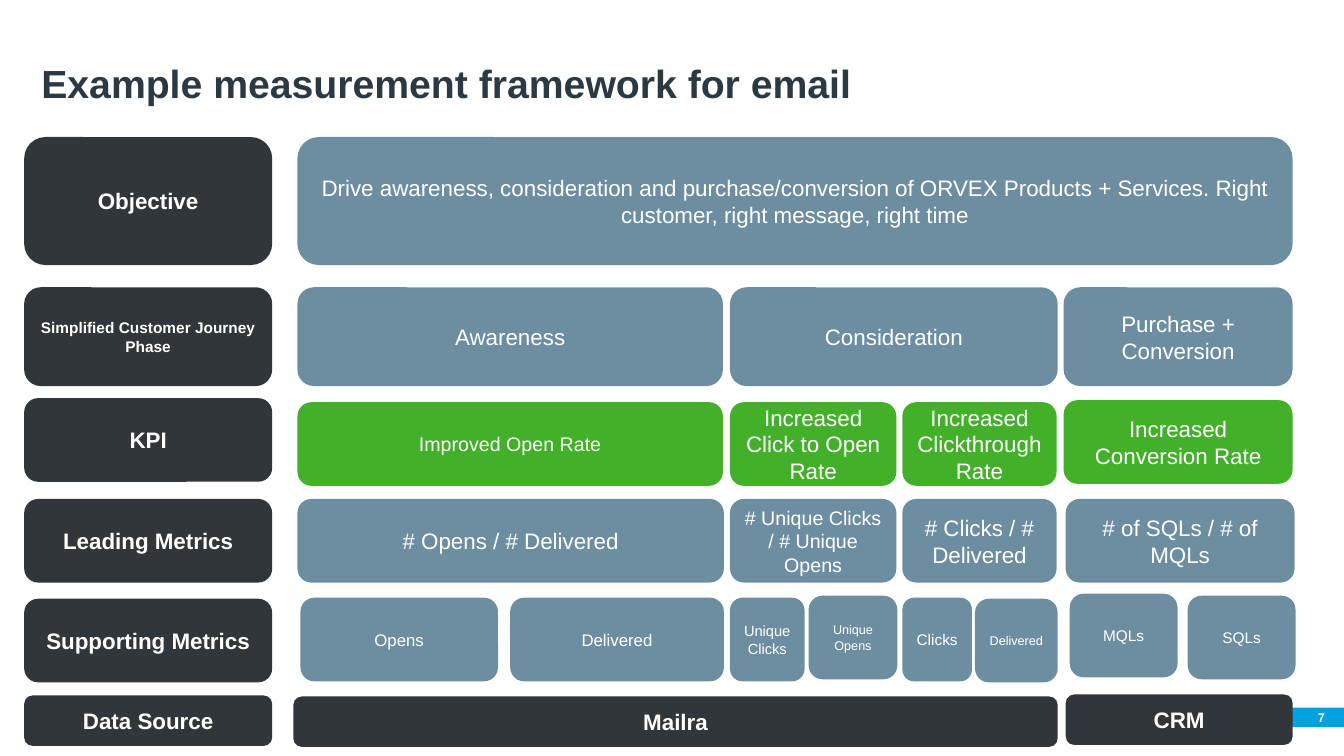
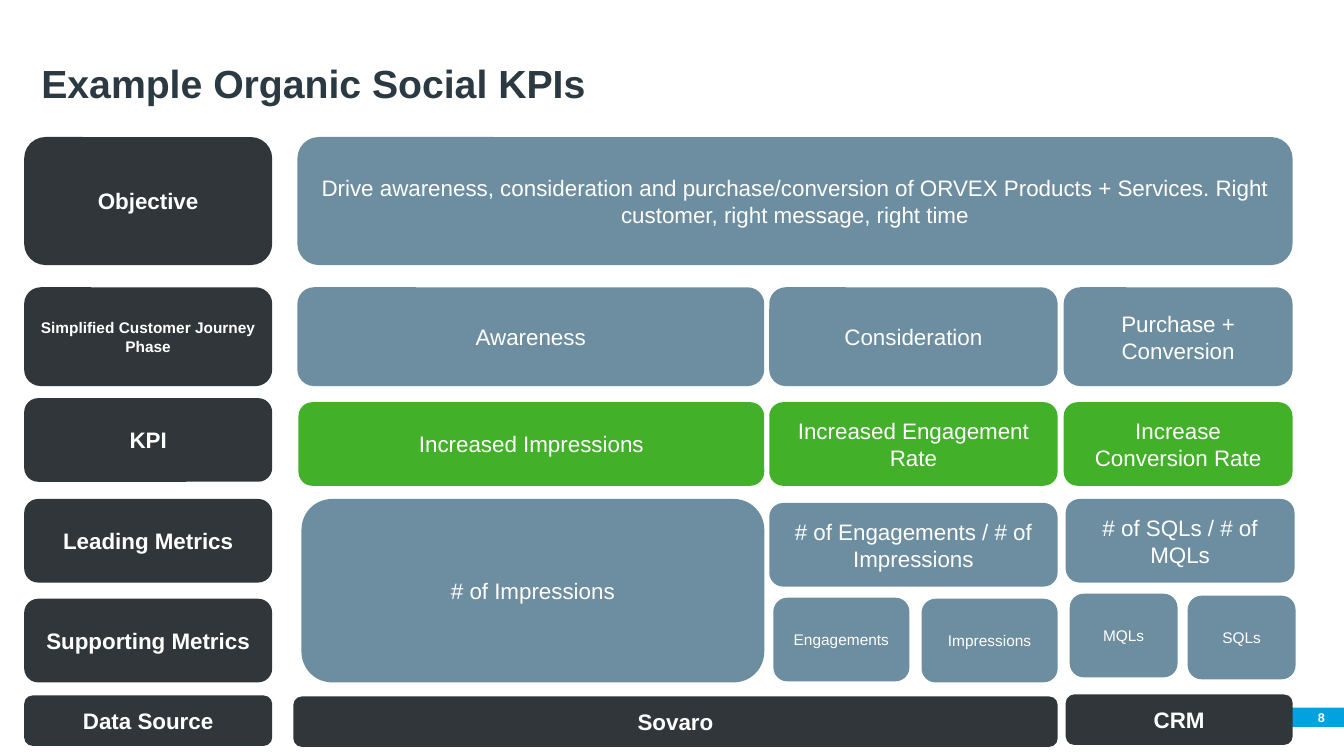
from pptx import Presentation
from pptx.dml.color import RGBColor
from pptx.enum import shapes, text
from pptx.util import Inches, Pt

THEME = {
    "font": "Arial",
    "colours": {"ink": "2B3A42", "white": "FFFFFF", "dark": "303639",
                "slate": "6D8EA0", "green": "43B02A", "accent": "00A3E0"},
    "sizes": {"title": 28, "body": 16, "medium": 14, "small": 12,
              "label": 11, "compact": 10.5, "tiny": 9},
}
FIRST_PAGE = 7
TITLE_AREA = (0.31, 0.27, 12.51, 0.84)
PAGE_BAR = (12.7, 7.02, 0.63, 0.19)
LABEL_LEFT, LABEL_WIDTH = 0.24, 2.46

ROWS = {
    "objective": (1.36, 1.27, "slate"),
    "phase": (2.85, 0.98, "slate"),
    "kpi": (3.99, 0.83, "green"),
    "leading": (4.95, 0.83, "slate"),
    "supporting": (5.93, 0.83, "slate"),
    "both metrics": (4.95, 1.82, "slate"),
    "source": (6.9, 0.5, "dark"),
}

LABELS = [
    ("objective", "Objective", "body", 0),
    ("phase", "Simplified Customer Journey Phase", "label", 0),
    ("kpi", "KPI", "body", -0.04),
    ("leading", "Leading Metrics", "body", 0),
    ("supporting", "Supporting Metrics", "body", 0.01),
    ("source", "Data Source", "body", 0),
]

# row, left, width, wording, size, vertical nudge
SHARED_CELLS = [
    ("objective", 2.95, 9.87,
     "Drive awareness, consideration and purchase/conversion of ORVEX "
     "Products + Services. Right customer, right message, right time", "body", 0),
    ("phase", 10.55, 2.27, "Purchase + Conversion", "body", 0),
    ("leading", 10.57, 2.27, "# of SQLs / # of MQLs", "body", 0),
    ("supporting", 10.61, 1.07, "MQLs", "label", -0.04),
    ("supporting", 11.78, 1.07, "SQLs", "label", -0.02),
    ("source", 10.57, 2.25, "CRM", "body", -0.01),
]

FRAMEWORKS = [
    ("Example measurement framework for email", [
        ("phase", 2.95, 4.22, "Awareness", "body", 0),
        ("phase", 7.24, 3.25, "Consideration", "body", 0),
        ("kpi", 2.95, 4.22, "Improved Open Rate", "medium", 0),
        ("kpi", 7.24, 1.65, "Increased Click to Open Rate", "body", 0),
        ("kpi", 8.95, 1.53, "Increased Clickthrough Rate", "body", 0),
        ("kpi", 10.55, 2.27, "Increased Conversion Rate", "body", -0.02),
        ("leading", 2.95, 4.23, "# Opens / # Delivered", "body", 0),
        ("leading", 7.24, 1.65, "# Unique Clicks / # Unique Opens", "medium", 0),
        ("leading", 8.95, 1.53, "# Clicks / # Delivered", "body", 0),
        ("supporting", 2.98, 1.96, "Opens", "small", 0),
        ("supporting", 5.06, 2.12, "Delivered", "small", 0),
        ("supporting", 7.24, 0.74, "Unique Clicks", "compact", 0),
        ("supporting", 8.02, 0.88, "Unique Opens", "tiny", -0.02),
        ("supporting", 8.95, 0.69, "Clicks", "label", 0),
        ("supporting", 9.67, 0.82, "Delivered", "tiny", 0.01),
        ("source", 2.91, 7.58, "Mailra", "body", 0.01),
    ]),
    ("Example Organic Social KPIs", [
        ("phase", 2.95, 4.63, "Awareness", "body", 0),
        ("phase", 7.63, 2.86, "Consideration", "body", 0),
        ("kpi", 2.96, 4.62, "Increased Impressions", "body", 0),
        ("kpi", 7.63, 2.86, "Increased Engagement Rate", "body", 0),
        ("kpi", 10.55, 2.27, "Increase Conversion Rate", "body", 0),
        ("both metrics", 2.99, 4.59, "# of Impressions", "body", 0),
        ("leading", 7.63, 2.86, "# of Engagements / # of Impressions", "body", 0.04),
        ("supporting", 7.67, 1.35, "Engagements", "label", 0),
        ("supporting", 9.14, 1.35, "Impressions", "label", 0.01),
        ("source", 2.91, 7.58, "Sovaro", "body", 0.01),
    ]),
]


def colour(name):
    return RGBColor.from_string(THEME["colours"][name])


def apply(target, values):
    for name, value in values.items():
        setattr(target, name, value)


def write(frame, wording, size, ink="white", bold=False, frame_format=None,
          paragraph_format=None):
    frame.text = wording
    paragraph = frame.paragraphs[0]
    apply(frame, {"word_wrap": True, "auto_size": text.MSO_AUTO_SIZE.NONE,
                  "vertical_anchor": text.MSO_ANCHOR.MIDDLE, **(frame_format or {})})
    apply(paragraph, {"alignment": text.PP_ALIGN.CENTER, **(paragraph_format or {})})
    apply(paragraph.font, {"name": THEME["font"], "bold": bold,
                           "size": Pt(THEME["sizes"][size])})
    paragraph.font.color.rgb = colour(ink)


def add_panel(slide, outline, area, fill):
    panel = slide.shapes.add_shape(outline, *map(Inches, area))
    panel.shadow.inherit = False
    panel.fill.solid()
    panel.fill.fore_color.rgb = colour(fill)
    panel.line.fill.background()
    return panel.text_frame


def add_cell(slide, row, left, width, wording, size, nudge, fill=None):
    top, height, row_fill = ROWS[row]
    fill = fill or row_fill
    frame = add_panel(slide, shapes.MSO_SHAPE.ROUNDED_RECTANGLE,
                      (left, top + nudge, width, height), fill)
    write(frame, wording, size, bold=fill == "dark")


def add_heading(slide, wording):
    heading = slide.shapes.title
    apply(heading, dict(zip(("left", "top", "width", "height"),
                            map(Inches, TITLE_AREA))))
    write(heading.text_frame, wording, "title", "ink", True,
          {"vertical_anchor": text.MSO_ANCHOR.BOTTOM},
          {"alignment": text.PP_ALIGN.LEFT, "line_spacing": 0.9})


def add_page_bar(slide, page):
    frame = add_panel(slide, shapes.MSO_SHAPE.RECTANGLE, PAGE_BAR, "accent")
    write(frame, str(page), "tiny", bold=True,
          frame_format={"margin_left": 0, "margin_top": 0, "margin_bottom": 0,
                        "margin_right": Inches(0.19)},
          paragraph_format={"alignment": text.PP_ALIGN.RIGHT})


def main():
    deck = Presentation()
    apply(deck, {"slide_width": Inches(13.33), "slide_height": Inches(7.5)})
    for page, (heading, cells) in enumerate(FRAMEWORKS, FIRST_PAGE):
        slide = deck.slides.add_slide(deck.slide_layouts[5])
        add_page_bar(slide, page)
        add_heading(slide, heading)
        for row, wording, size, nudge in LABELS:
            add_cell(slide, row, LABEL_LEFT, LABEL_WIDTH, wording, size, nudge, "dark")
        for cell in SHARED_CELLS + cells:
            add_cell(slide, *cell)
    deck.save("out.pptx")


if __name__ == "__main__":
    main()
